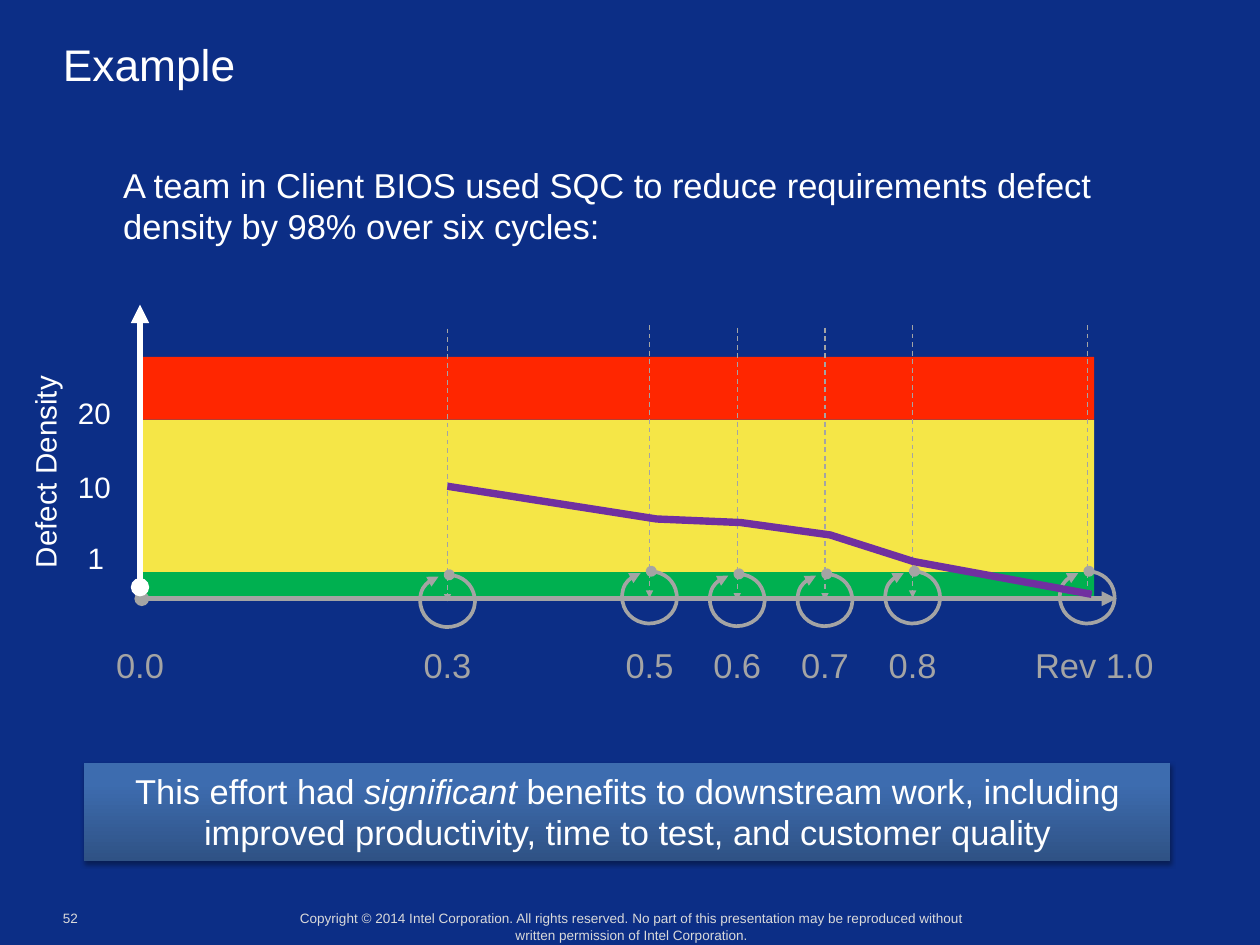
from copy import deepcopy

from lxml import etree
from pptx import Presentation
from pptx.dml.color import RGBColor
from pptx.enum import dml, shapes, text
from pptx.oxml.ns import qn
from pptx.util import Inches, Pt

COLORS = {
    "background": "0C2E86", "white": "FFFFFF", "gray": "A4A4A4",
    "footer": "DADADA", "red": "FF2600", "yellow": "F5E647",
    "green": "00B050", "trend": "7030A0", "banner_dark": "2F5285",
    "banner_mid": "3D6CAF", "banner_light": "3C6CB2", "shadow": "000000",
}
CENTER = text.PP_ALIGN.CENTER
LEFT = text.PP_ALIGN.LEFT
BAND_LEFT, BAND_WIDTH = 1.58, 10.77
AXIS_Y = 6.76
MARKER_LENGTH = 3.08

# Revision, horizontal place, top of the dashed marker
CYCLES = [("0.3", 5.05, 3.71), ("0.5", 7.33, 3.67), ("0.6", 8.32, 3.7),
          ("0.7", 9.31, 3.7), ("0.8", 10.3, 3.67), ("Rev 1.0", 12.27, 3.67)]
BANDS = [("red", 4.03, 0.71), ("yellow", 4.74, 1.72), ("green", 6.46, 0.3)]
DENSITIES = [("20", 0.81, 4.39, 0.56), ("10", 0.81, 5.23, 0.56),
             ("1", 0.92, 6.03, 0.36)]
TREND = [(5.05, 5.49), (7.41, 5.86), (8.36, 5.9), (9.37, 6.04),
         (10.31, 6.34), (12.32, 6.71)]
# Loop around a marker's foot: start, then four curves of three points each
LOOP = [(0.02, -0.3),
        (0.19, -0.29), (0.31, -0.15), (0.31, 0.01),
        (0.3, 0.18), (0.16, 0.29), (-0.01, 0.29),
        (-0.19, 0.28), (-0.31, 0.15), (-0.31, -0.02),
        (-0.3, -0.14), (-0.22, -0.25), (-0.1, -0.28)]


def rgb(name):
    return RGBColor.from_string(COLORS[name])


def write(shape, runs, size, color, align=LEFT, margin=0.07, wrap=True,
          grow=True):
    """Fill a shape with one paragraph; runs are (words, italic) pairs."""
    frame = shape.text_frame
    frame.word_wrap = wrap
    frame.vertical_anchor = text.MSO_ANCHOR.TOP
    if grow:
        frame.auto_size = text.MSO_AUTO_SIZE.SHAPE_TO_FIT_TEXT
    frame.margin_left = frame.margin_right = Inches(margin)
    frame.margin_top = frame.margin_bottom = Inches(margin)
    paragraph = frame.paragraphs[0]
    paragraph.alignment = align
    paragraph.font.name = "Arial"
    paragraph.font.size = Pt(size)
    paragraph.font.color.rgb = rgb(color)
    for words, italic in runs:
        run = paragraph.add_run()
        run.text = words
        if italic:
            run.font.italic = True


def add_text(slide, words, box, size, color, **options):
    shape = slide.shapes.add_textbox(*map(Inches, box))
    write(shape, [(words, False)], size, color, **options)
    return shape


def add_rectangle(slide, left, top, width, height):
    shape = slide.shapes.add_shape(shapes.MSO_SHAPE.RECTANGLE, Inches(left),
                                   Inches(top), Inches(width), Inches(height))
    shape.shadow.inherit = False
    shape.line.fill.background()
    return shape


def style_line(shape, color, width, head=None, tail=None):
    shape.line.color.rgb = rgb(color)
    shape.line.width = Pt(width)
    outline = shape.line._ln
    for tag, kind in (("a:headEnd", head), ("a:tailEnd", tail)):
        if kind:
            etree.SubElement(outline, qn(tag), type=kind)


def add_line(container, start, end, color, width, head=None, dashed=False):
    line = container.shapes.add_connector(
        shapes.MSO_CONNECTOR.STRAIGHT, *map(Inches, (*start, *end)))
    if dashed:
        line.line.dash_style = dml.MSO_LINE.DASH
    style_line(line, color, width, head, "triangle")
    etree.SubElement(line._element.spPr, qn("a:effectLst"))


def add_path(container, points, color, width, head=None, tail=None):
    points = [(Inches(x), Inches(y)) for x, y in points]
    builder = container.shapes.build_freeform(*points[0])
    builder.add_line_segments(points[1:], close=False)
    path = builder.convert_to_shape()
    path.shadow.inherit = False
    path.fill.background()
    style_line(path, color, width, head, tail)
    return path


def bend(path):
    """Turn each three line segments of a path into one Bezier curve."""
    segments = list(path._element.iter(qn("a:lnTo")))
    outline = segments[0].getparent()
    for first in range(0, len(segments), 3):
        curve = etree.SubElement(outline, qn("a:cubicBezTo"))
        for segment in segments[first:first + 3]:
            curve.append(segment[0])
            outline.remove(segment)


def add_cycle(slide, x, top):
    """Dashed marker with a clockwise loop around its foot."""
    group = slide.shapes.add_group_shape()
    bottom = top + MARKER_LENGTH
    add_line(group, (x, top), (x, bottom), "gray", 1, dashed=True)
    loop = [(x + right, bottom + down) for right, down in LOOP]
    bend(add_path(group, loop, "gray", 3, "oval", "triangle"))


def add_banner(slide, runs):
    banner = add_rectangle(slide, 0.95, 8.62, 12.26, 1.1)
    # Three-stop gradient
    banner.fill.gradient()
    banner.fill.gradient_angle = 90
    stop_list = banner._element.spPr.find(".//" + qn("a:gsLst"))
    stop_list.append(deepcopy(stop_list[-1]))
    stops = [("banner_dark", 0), ("banner_mid", 0.8), ("banner_light", 1)]
    for stop, (color, position) in zip(banner.fill.gradient_stops, stops):
        stop.color.rgb = rgb(color)
        stop.position = position
    # Soft shadow below
    effects = banner._element.spPr.find(qn("a:effectLst"))
    shadow = etree.SubElement(effects, qn("a:outerShdw"), blurRad=str(Pt(4)),
                              dist=str(Pt(2)), dir="5400000", rotWithShape="0")
    tint = etree.SubElement(shadow, qn("a:srgbClr"), val=COLORS["shadow"])
    etree.SubElement(tint, qn("a:alpha"), val="35000")
    write(banner, runs, 28, "white", align=CENTER)


def add_chart_area(slide):
    for color, top, height in BANDS:
        band = add_rectangle(slide, BAND_LEFT, top, BAND_WIDTH, height)
        band.fill.solid()
        band.fill.fore_color.rgb = rgb(color)

    # Axes and cycles
    add_line(slide, (1.6, AXIS_Y), (12.6, AXIS_Y), "gray", 4, "oval")
    for _, x, top in CYCLES:
        add_cycle(slide, x, top)
    add_line(slide, (BAND_LEFT, 6.63), (BAND_LEFT, 3.44), "white", 5, "oval")

    # Axis labels
    for label, x, _ in [("0.0", 1.58, 0)] + CYCLES:
        width, center = (0.71, x) if len(label) == 3 else (1.52, 12.35)
        add_text(slide, label, (center - width / 2, 7.2, width, 0.62), 28,
                 "gray", align=CENTER, wrap=False)
    for label, left, top, width in DENSITIES:
        add_text(slide, label, (left, top, width, 0.58), 24, "white",
                 wrap=False)
    axis_title = add_text(slide, "Defect Density", (-0.71, 4.96, 2.47, 0.58),
                          24, "white", wrap=False)
    axis_title.rotation = 270

    add_path(slide, TREND, "trend", 6)


def main():
    presentation = Presentation()
    presentation.slide_width = Inches(14.22)
    presentation.slide_height = Inches(10.67)
    slide = presentation.slides.add_slide(presentation.slide_layouts[6])
    slide.background.fill.solid()
    slide.background.fill.fore_color.rgb = rgb("background")

    # Heading and introduction
    add_text(slide, "Example", (0.71, 0.42, 12.81, 1.38), 36, "white",
             margin=0, grow=False)
    add_text(slide, "A team in Client BIOS used SQC to reduce requirements "
             "defect density by 98% over six cycles:",
             (1.32, 1.78, 11.42, 1.1), 28, "white")

    add_chart_area(slide)

    # Conclusion
    add_banner(slide, [
        ("This effort had ", False), ("significant", True),
        (" benefits to downstream work, including improved productivity, "
         "time to test, and customer quality", False)])

    # Footer
    add_text(slide, "52", (0.71, 10.28, 0.2, 0.2), 11, "footer", margin=0,
             wrap=False)
    add_text(slide, "Copyright © 2014 Intel Corporation. All rights reserved. "
             "No part of this presentation may be reproduced without written "
             "permission of Intel Corporation.", (3.32, 10.28, 7.62, 0.4), 11,
             "footer", align=CENTER, margin=0)
    presentation.save("out.pptx")


if __name__ == "__main__":
    main()
